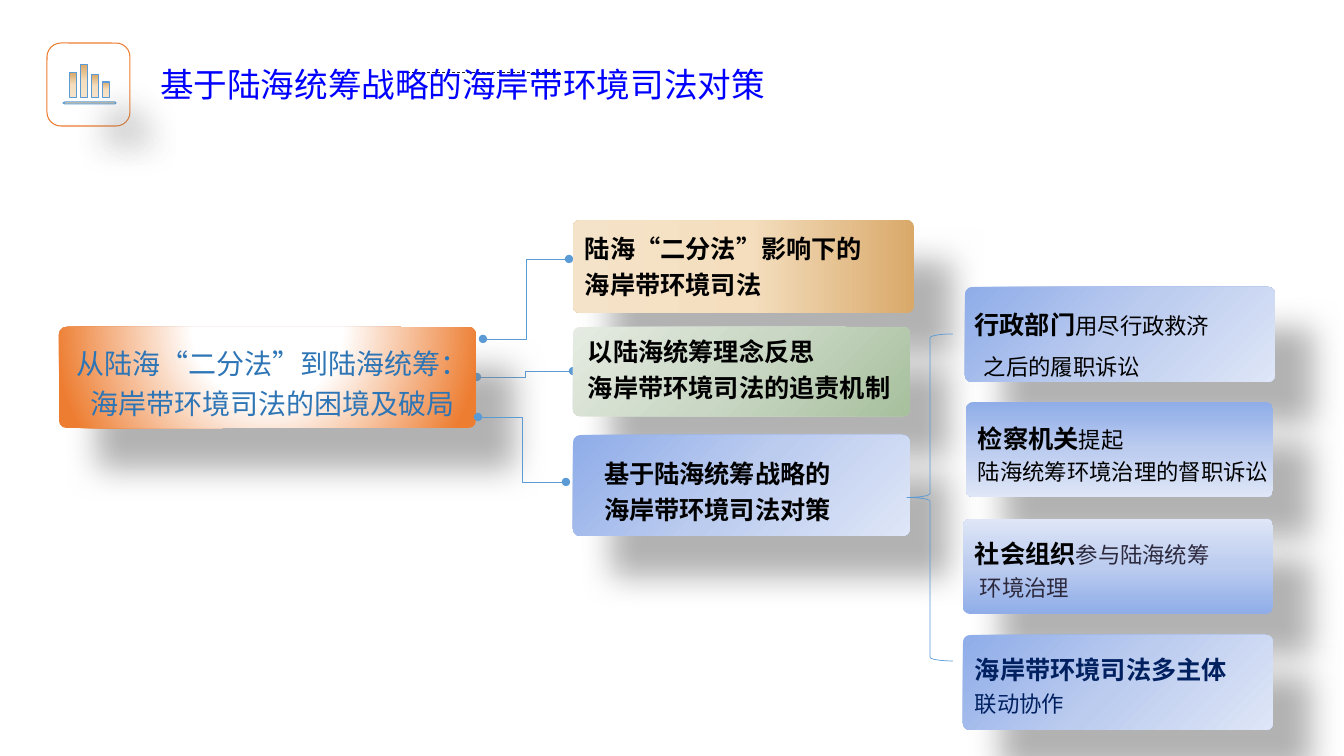
import pptx
import pptx.util
import pptx.dml.color
import pptx.enum.dml
import pptx.enum.lang
import pptx.enum.shapes
import pptx.enum.text
import pptx.oxml
import pptx.oxml.ns
import lxml.etree

PX = 914400 / 100.8
NS = 'xmlns:a="http://schemas.openxmlformats.org/drawingml/2006/main"'
SHAPE = pptx.enum.shapes.MSO_SHAPE
CENTER = pptx.enum.text.PP_ALIGN.CENTER
GROW = pptx.enum.text.MSO_AUTO_SIZE.SHAPE_TO_FIT_TEXT
rgb = pptx.dml.color.RGBColor.from_string

SAND = [(0, "D9A96A"), (48, "F4DEBE"), (100, "F5E3C9")]
SKY = [(0, "8FADE9"), (50, "BCCCEF"), (100, "DEE6F7")]
LEAF = [(0, "A7C09D"), (50, "C9D7C4"), (100, "E5EBE2")]
GLOW = [(0, "FFFFFF"), (35, "FFFFFF"), (100, "ED7D31")]
THEME = {
    "line": "5B9BD5", "orange": "ED7D31", "dash": "262626", "shadow": "808080",
    "title": "0000FF", "topic": "2E75B6", "ink": "000000", "soft": "2C293D", "navy": "002060",
    "title_size": 24, "topic_size": 20, "head_size": 18, "note_size": 16,
    "title_font": "Arial", "font": "Calibri", "cjk": "Noto Sans CJK SC",
}


def paint(shape, stops, direction):
    shape.fill.gradient()
    grad = shape._element.spPr.find(pptx.oxml.ns.qn("a:gradFill"))
    grad.clear()
    colours = "".join(f'<a:gs pos="{at * 1000}"><a:srgbClr val="{c}"/></a:gs>' for at, c in stops)
    grad.append(pptx.oxml.parse_xml(f"<a:gsLst {NS}>{colours}</a:gsLst>"))
    if isinstance(direction, int):
        course = f'<a:lin {NS} ang="{direction * 60000}" scaled="0"/>'
    else:
        sides = " ".join(f'{k}="{v * 1000}"' for k, v in zip("ltrb", direction))
        course = f'<a:path {NS} path="circle"><a:fillToRect {sides}/></a:path>'
    grad.append(pptx.oxml.parse_xml(course))
    shape.shadow.inherit = False
    shape._element.spPr.find(pptx.oxml.ns.qn("a:effectLst")).append(pptx.oxml.parse_xml(
        f'<a:outerShdw {NS} blurRad="{23 * 12700}" dist="{40 * 12700}" dir="{47 * 60000}" '
        f'algn="ctr" rotWithShape="0"><a:srgbClr val="{THEME["shadow"]}">'
        f'<a:alpha val="60000"/></a:srgbClr></a:outerShdw>'))


def write(tf, paragraphs, font="font", align=None, spacing=1.2):
    for i, (margin, indent, runs) in enumerate(paragraphs):
        p = tf.add_paragraph() if i else tf.paragraphs[0]
        pPr = p._p.get_or_add_pPr()
        pPr.set("marL", str(round(margin * PX)))
        pPr.set("indent", str(round(indent * PX)))
        p.alignment = align or pptx.enum.text.PP_ALIGN.LEFT
        p.line_spacing = spacing
        for text, size, colour, bold in runs:
            r = p.add_run()
            r.text = text
            r.font.size = pptx.util.Pt(THEME[size])
            r.font.bold = bold
            r.font.color.rgb = rgb(THEME[colour])
            r.font.name = THEME[font]
            r.font.language_id = pptx.enum.lang.MSO_LANGUAGE_ID.SIMPLIFIED_CHINESE
            ea = lxml.etree.SubElement(r.font._element, pptx.oxml.ns.qn("a:ea"))
            ea.set("typeface", THEME["cjk"])


prs = pptx.Presentation()
prs.slide_width = round(1344 * PX)
prs.slide_height = round(756 * PX)
s = prs.slides.add_slide(prs.slide_layouts[6])

frame = s.shapes.add_shape(SHAPE.ROUNDED_RECTANGLE, *[round(v * PX) for v in (47, 43, 83, 83)])
frame.fill.background()
frame.line.color.rgb = rgb(THEME["orange"])
frame.line.width = pptx.util.Pt(0.75)
frame.shadow.inherit = False

ground = s.shapes.build_freeform(65, 104, scale=PX)
ground.add_line_segments([(63, 103), (65, 102), (115, 102), (116, 103), (115, 104)])
icon_parts = [ground.convert_to_shape()]
for i, top in enumerate((73, 65, 75, 82)):
    box = (70 + 11 * i, top, 7, 98 - top)
    icon_parts.append(s.shapes.add_shape(SHAPE.RECTANGLE, *[round(v * PX) for v in box]))
for part in icon_parts:
    part.line.color.rgb = rgb(THEME["line"])
    part.line.width = pptx.util.Pt(0.75)
    paint(part, SAND, 90)

links = [
    ((407, 72, 560, 72), "STRAIGHT", "dash"),
    ((569, 259, 483, 339), "ELBOW", "line"),
    ((573, 371, 477, 377), "ELBOW", "line"),
    ((566, 482, 478, 417), "ELBOW", "line"),
]
for ends, kind, colour in links:
    link = s.shapes.add_connector(pptx.enum.shapes.MSO_CONNECTOR[kind], *[round(v * PX) for v in ends])
    link.line.color.rgb = rgb(THEME[colour])
    link.line.width = pptx.util.Pt(0.5)
    if kind == "STRAIGHT":
        link.line.dash_style = pptx.enum.dml.MSO_LINE.DASH
    else:
        ln = link.line._get_or_add_ln()
        for end in ("a:headEnd", "a:tailEnd"):
            lxml.etree.SubElement(ln, pptx.oxml.ns.qn(end)).set("type", "oval")
    lxml.etree.SubElement(link._element.spPr, pptx.oxml.ns.qn("a:effectLst"))

society = [
    (0, 0, [("社会组织", "head_size", "ink", True), ("参与陆海统筹", "note_size", "soft", False)]),
    (5, 0, [("环境治理", "note_size", "soft", False)]),
]
cooperation = [
    (0, 0, [("海岸带环境司法多主体", "head_size", "navy", True)]),
    (0, 0, [("联动协作", "note_size", "navy", False)]),
]
cards = [
    ((573, 220, 341, 93), SAND, 180, []),
    ((573, 327, 337, 89), LEAF, (100, 100, 0, 0), []),
    ((573, 435, 337, 101), SKY, 45, []),
    ((59, 327, 417, 101), GLOW, (50, -80, 50, 180), []),
    ((965, 287, 310, 95), SKY, 45, []),
    ((966, 402, 307, 95), SKY, 90, []),
    ((963, 519, 310, 95), SKY, 270, society),
    ((963, 635, 310, 95), SKY, 45, cooperation),
]
for box, stops, direction, paragraphs in cards:
    card = s.shapes.add_shape(SHAPE.ROUNDED_RECTANGLE, *[round(v * PX) for v in box])
    card.adjustments[0] = 0.073
    card.line.fill.background()
    paint(card, stops, direction)
    card.text_frame.vertical_anchor = pptx.enum.text.MSO_ANCHOR.MIDDLE
    write(card.text_frame, paragraphs)
link._element.getparent().append(link._element)

brace = s.shapes.add_shape(SHAPE.LEFT_BRACE, *[round(v * PX) for v in (907, 334, 46, 327)])
brace.fill.background()
brace.line.color.rgb = rgb(THEME["line"])
brace.line.width = pptx.util.Pt(0.5)
brace.shadow.inherit = False

labels = [
    ((150, 51, 717, 54), (10, 5), True, "title_font", None, 1.2, [
        (0, 0, [("基于陆海统筹战略的海岸带环境司法对策", "title_size", "title", False)])]),
    ((526, 220, 399, 84), (13, 7), True, "font", None, 1.2, [
        (46, 0, [("陆海“二分法”影响下的", "head_size", "ink", True)]),
        (46, 0, [("海岸带环境司法", "head_size", "ink", True)])]),
    ((569, 323, 342, 84), (13, 7), True, "font", None, 1.2, [
        (6, 0, [("以陆海统筹理念反思", "head_size", "ink", True)]),
        (6, 0, [("海岸带环境司法的追责机制", "head_size", "ink", True)])]),
    ((591, 445, 256, 84), (13, 7), False, "font", None, 1.2, [
        (0, 0, [("基于陆海统筹战略的", "head_size", "ink", True)]),
        (0, 0, [("海岸带环境司法对策", "head_size", "ink", True)])]),
    ((56, 333, 433, 90), (13, 7), True, "cjk", CENTER, 1.2, [
        (0, 0, [("从陆海“二分法”到陆海统筹：", "topic_size", "topic", False)]),
        (0, 0, [("海岸带环境司法的困境及破局", "topic_size", "topic", False)])]),
    ((893, 287, 338, 95), (13, 7), True, "font", CENTER, 1.5, [
        (0, 60, [("行政部门", "head_size", "ink", True),
                 ("用尽行政救济之后的履职诉讼", "note_size", "ink", False)])]),
    ((965, 410, 324, 80), (13, 7), True, "font", None, 1.2, [
        (0, 0, [("检察机关", "head_size", "ink", True), ("提起", "note_size", "ink", False)]),
        (0, 0, [("陆海统筹环境治理的督职诉讼", "note_size", "ink", False)])]),
]
for box, (side, edge), wrap, font, align, spacing, paragraphs in labels:
    tf = s.shapes.add_textbox(*[round(v * PX) for v in box]).text_frame
    tf.word_wrap = wrap
    tf.auto_size = GROW
    tf.margin_left = tf.margin_right = round(side * PX)
    tf.margin_top = tf.margin_bottom = round(edge * PX)
    write(tf, paragraphs, font, align, spacing)

prs.save("out.pptx")
